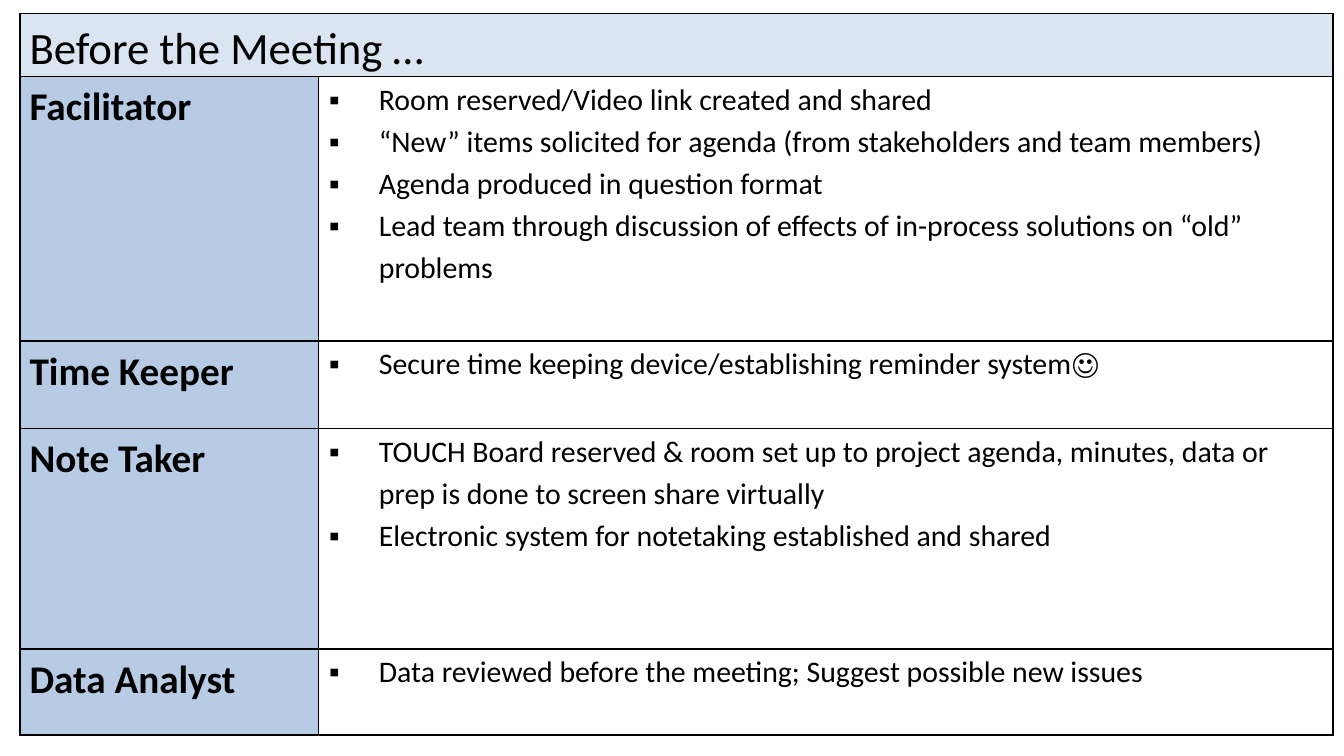
import pptx
import pptx.dml.color
import pptx.enum.text
import pptx.oxml
import pptx.oxml.ns
import pptx.util
from pptx.util import Inches

FONT = "Calibri"
BLACK = "000000"
HEADER_FILL = "DAE5F1"
ROLE_FILL = "B7CCE4"
COL_WIDTHS = [2.22, 7.55]
ROW_HEIGHTS = [0.45, 1.97, 0.65, 1.64, 0.64]
HEADING = "Before the Meeting …"
ROLES = [
    ("Facilitator", [
        "Room reserved/Video link created and shared",
        "“New” items solicited for agenda (from stakeholders and team members)",
        "Agenda produced in question format",
        "Lead team through discussion of effects of in-process solutions on “old” problems",
    ]),
    ("Time Keeper", ["Secure time keeping device/establishing reminder system☺"]),
    ("Note Taker", [
        "TOUCH Board reserved & room set up to project agenda, minutes, data or "
        "prep is done to screen share virtually",
        "Electronic system for notetaking established and shared",
    ]),
    ("Data Analyst", ["Data reviewed before the meeting; Suggest possible new issues"]),
]


def rgb(color):
    return pptx.dml.color.RGBColor.from_string(color)


def add_element(parent, tag, **attributes):
    element = pptx.oxml.parse_xml(f"<{tag} {pptx.oxml.ns.nsdecls('a')}/>")
    for name, value in attributes.items():
        element.set(name, str(value))
    parent.append(element)
    return element


def add_bullet(p):
    pPr = p._p.get_or_add_pPr()
    pPr.set("marL", str(Inches(0.38)))
    pPr.set("indent", str(Inches(-0.37)))
    add_element(add_element(pPr, "a:buClr"), "a:srgbClr", val=BLACK)
    add_element(pPr, "a:buFont", typeface=FONT)
    add_element(pPr, "a:buChar", char="▪")


def format_cell(cell, fill=None):
    """Set borders, margins and fill; borders come first in the cell's XML."""
    tcPr = cell._tc.get_or_add_tcPr()
    for side in "LRTB":
        line = add_element(tcPr, f"a:ln{side}", w=pptx.util.Pt(1))
        add_element(add_element(line, "a:solidFill"), "a:srgbClr", val=BLACK)
    cell.margin_left = cell.margin_right = Inches(0.07)
    cell.margin_top = cell.margin_bottom = 0
    if fill:
        cell.fill.solid()
        cell.fill.fore_color.rgb = rgb(fill)
    else:
        cell.fill.background()


def write_cell(cell, lines, size, bold=False, bullets=False):
    tf = cell.text_frame
    for i, line in enumerate(lines):
        p = tf.add_paragraph() if i else tf.paragraphs[0]
        p.text = line
        p.line_spacing = 1.15
        if bullets:
            add_bullet(p)
        p.font.name = FONT
        p.font.size = pptx.util.Pt(size)
        p.font.bold = bold
        p.font.color.rgb = rgb(BLACK)


def add_roles_table(s):
    frame = s.shapes.add_table(len(ROW_HEIGHTS), len(COL_WIDTHS), Inches(0.15), Inches(0.1),
                               Inches(sum(COL_WIDTHS)), Inches(sum(ROW_HEIGHTS)))
    table = frame.table
    table.first_row = table.horz_banding = False
    for column, width in zip(table.columns, COL_WIDTHS):
        column.width = Inches(width)
    for row, height in zip(table.rows, ROW_HEIGHTS):
        row.height = Inches(height)

    header = table.cell(0, 0)
    header.merge(table.cell(0, 1))
    for column in range(len(COL_WIDTHS)):
        format_cell(table.cell(0, column), HEADER_FILL)
    header.vertical_anchor = pptx.enum.text.MSO_ANCHOR.MIDDLE
    write_cell(header, [HEADING], 24)

    for row, (role, tasks) in enumerate(ROLES, start=1):
        role_cell, task_cell = table.cell(row, 0), table.cell(row, 1)
        format_cell(role_cell, ROLE_FILL)
        write_cell(role_cell, [role], 21, bold=True)
        format_cell(task_cell)
        write_cell(task_cell, tasks, 16, bullets=True)


def main():
    prs = pptx.Presentation()
    prs.slide_width = Inches(10)
    prs.slide_height = prs.slide_width * 9 // 16
    s = prs.slides.add_slide(prs.slide_layouts[6])
    add_roles_table(s)
    prs.save("out.pptx")


if __name__ == "__main__":
    main()
